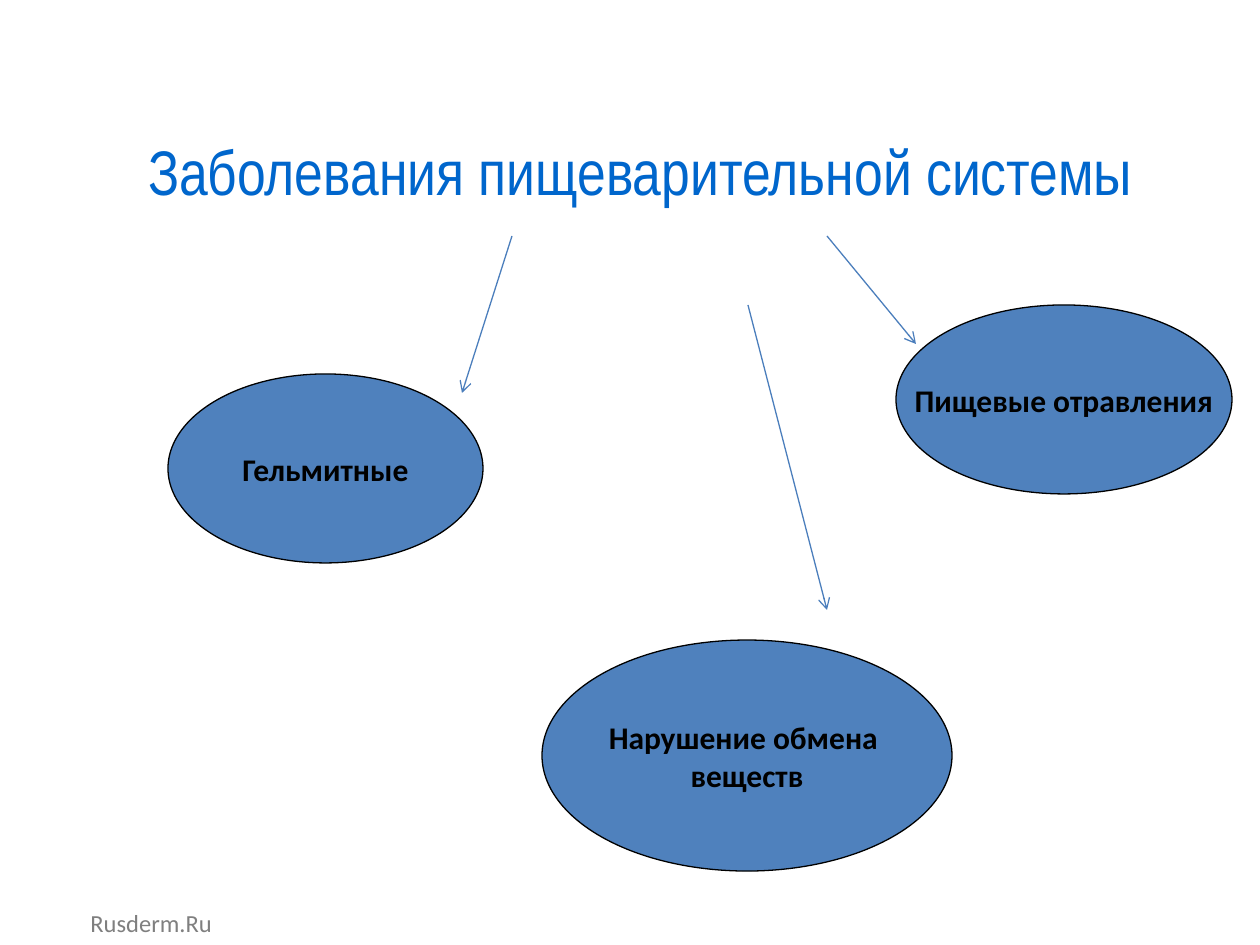
import pptx
import pptx.util
import pptx.dml.color
import pptx.enum.shapes
import pptx.enum.text
import pptx.oxml.ns
from lxml import etree

PX = 914400 / 126
COLORS = {
    "title": "0066CC",
    "title_edge": "99CCFF",
    "oval": "4F81BD",
    "black": "000000",
    "arrow": "4B7EBC",
    "footer": "7F7F7F",
}
# Left, top, width, height and lines of text
DISEASES = [
    ((168, 374, 315, 189), ["Гельмитные"]),
    ((896, 305, 336, 189), ["Пищевые отравления"]),
    ((542, 640, 410, 231), ["Нарушение обмена ", "веществ"]),
]
# Start x, start y, end x, end y
ARROWS = [(512, 236, 462, 393), (827, 236, 916, 344), (748, 305, 827, 610)]


def emu(lengths):
    return [round(length * PX) for length in lengths]


def rgb(name):
    return pptx.dml.color.RGBColor.from_string(COLORS[name])


def add_child(parent, tag, **attributes):
    return etree.SubElement(parent, pptx.oxml.ns.qn(tag), attributes)


def write_text(frame, lines, *, font, size, color, bold=False,
               align="LEFT", anchor="TOP"):
    frame.word_wrap = False
    frame.vertical_anchor = pptx.enum.text.MSO_ANCHOR[anchor]
    for index, line in enumerate(lines):
        para = frame.add_paragraph() if index else frame.paragraphs[0]
        para.alignment = pptx.enum.text.PP_ALIGN[align]
        span = para.add_run()
        span.text = line
        span.font.name = font
        span.font.size = pptx.util.Pt(size)
        span.font.bold = bold
        span.font.color.rgb = rgb(color)


def add_label(page, place, text, **text_format):
    box = page.shapes.add_textbox(*emu(place))
    write_text(box.text_frame, [text], **text_format)
    return box


def outline_text(box, color, width):
    for para in box.text_frame.paragraphs:
        for span in para.runs:
            properties = span.font._element
            edge = etree.Element(pptx.oxml.ns.qn("a:ln"),
                                 w=str(pptx.util.Pt(width)))
            fill = add_child(edge, "a:solidFill")
            add_child(fill, "a:srgbClr", val=COLORS[color])
            properties.insert(0, edge)


def add_oval(page, place, lines):
    oval = page.shapes.add_shape(pptx.enum.shapes.MSO_SHAPE.OVAL, *emu(place))
    oval.shadow.inherit = False
    oval.fill.solid()
    oval.fill.fore_color.rgb = rgb("oval")
    oval.line.color.rgb = rgb("black")
    oval.line.width = pptx.util.Pt(0.75)
    write_text(oval.text_frame, lines, font="Calibri", size=18, color="black",
               bold=True, align="CENTER", anchor="MIDDLE")


def add_arrow(page, ends):
    arrow = page.shapes.add_connector(
        pptx.enum.shapes.MSO_CONNECTOR.STRAIGHT, *emu(ends))
    arrow.line.color.rgb = rgb("arrow")
    arrow.line.width = pptx.util.Pt(0.75)
    add_child(arrow.line._get_or_add_ln(), "a:tailEnd", type="arrow")
    add_child(arrow._element.spPr, "a:effectLst")


def main():
    deck = pptx.Presentation()
    deck.slide_width = pptx.util.Inches(10)
    deck.slide_height = pptx.util.Inches(7.5)
    page = deck.slides.add_slide(deck.slide_layouts[6])

    # Footer and title
    footer = add_label(page, (78, 902, 147, 43), "Rusderm.Ru",
                       font="Calibri", size=14, color="footer")
    footer.text_frame.auto_size = pptx.enum.text.MSO_AUTO_SIZE.SHAPE_TO_FIT_TEXT
    title = add_label(page, (63, 126, 1155, 78),
                      "Заболевания пищеварительной системы",
                      font="Arial Narrow", size=36, color="title",
                      align="CENTER")
    outline_text(title, "title_edge", 1.5)

    # Kinds of disease
    for place, lines in DISEASES:
        add_oval(page, place, lines)

    # Arrows from the title
    for ends in ARROWS:
        add_arrow(page, ends)

    deck.save("out.pptx")


if __name__ == "__main__":
    main()
